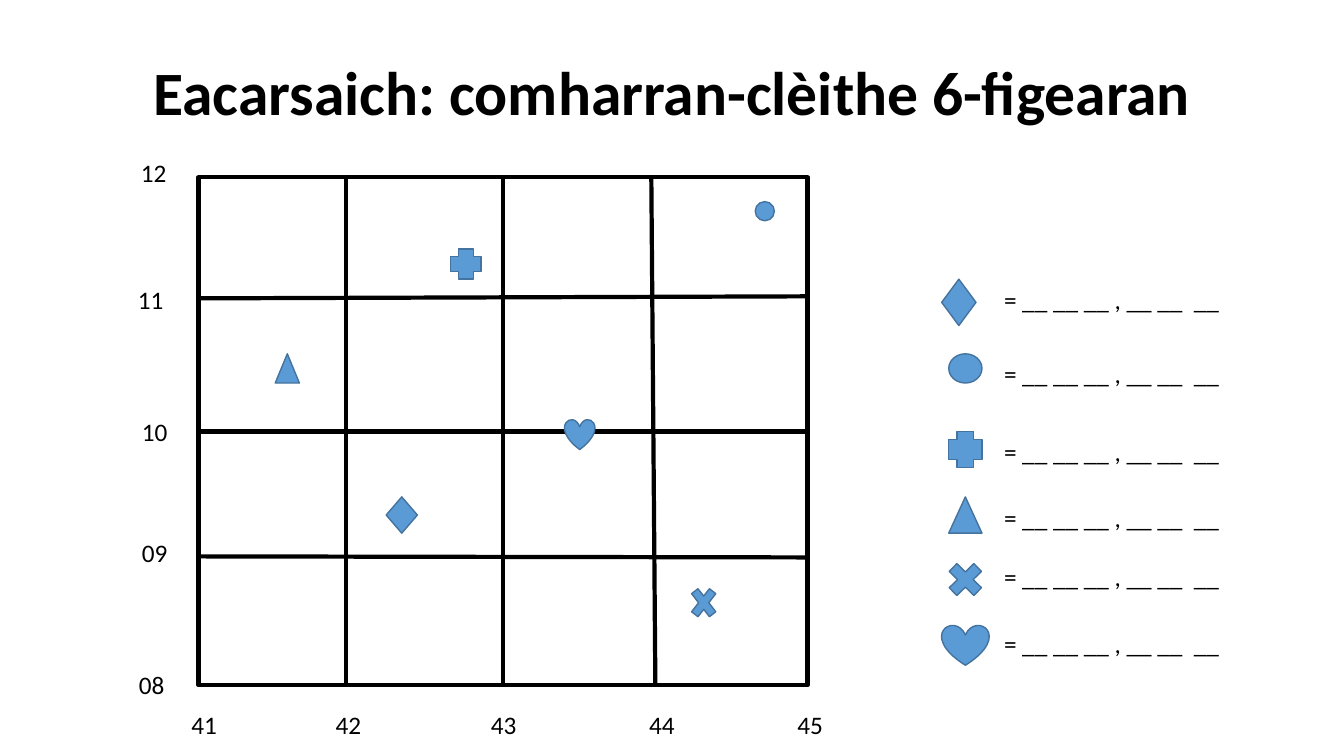
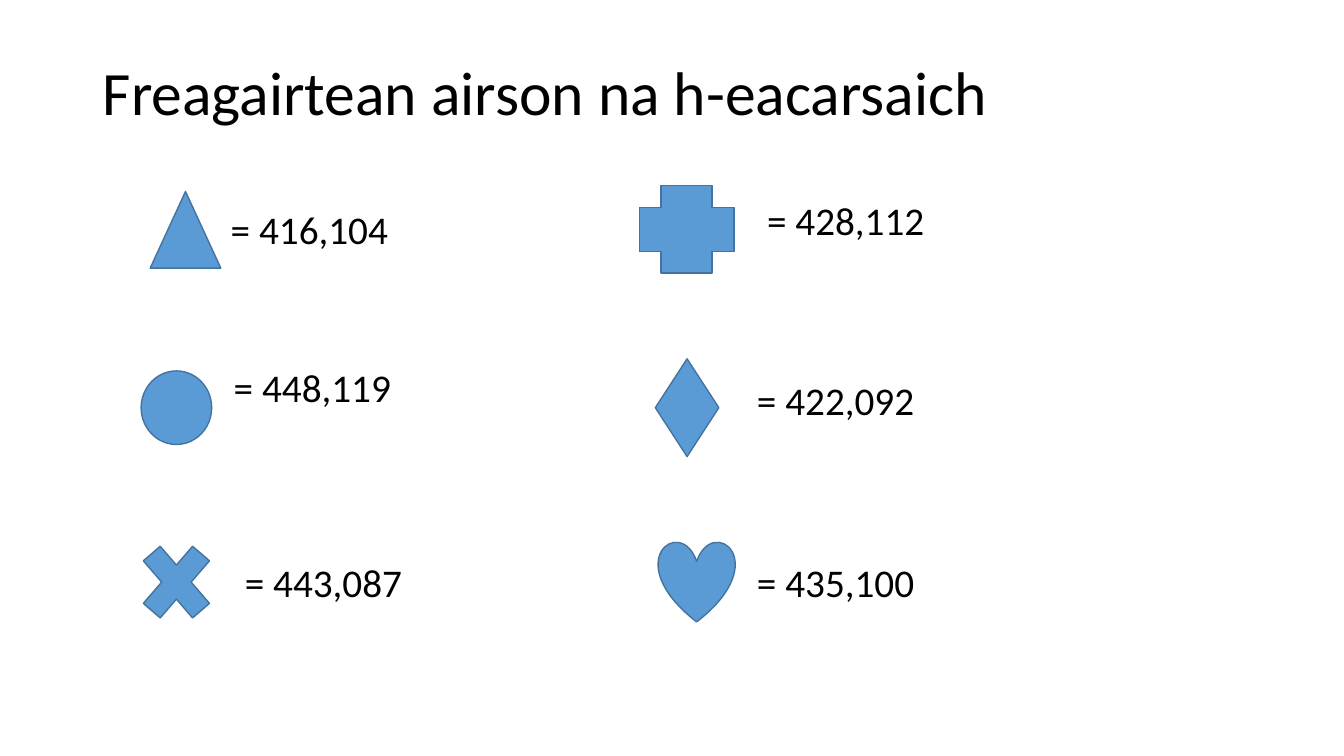
from pptx import Presentation
from pptx.dml.color import RGBColor
from pptx.enum.shapes import MSO_CONNECTOR, MSO_SHAPE
from pptx.enum.text import MSO_ANCHOR, MSO_AUTO_SIZE, PP_ALIGN
from pptx.oxml.ns import qn
from pptx.util import Pt
from lxml import etree

PX = 9144  # 100 px to the inch
BLACK = RGBColor(0x00, 0x00, 0x00)
BLUE = RGBColor(0x5B, 0x9B, 0xD5)
DARK_BLUE = RGBColor(0x43, 0x73, 0x9E)
FONT = "Calibri"

DIAMOND = MSO_SHAPE.DIAMOND
CIRCLE = MSO_SHAPE.OVAL
PLUS = MSO_SHAPE.CROSS
TRIANGLE = MSO_SHAPE.ISOSCELES_TRIANGLE
MULTIPLY = MSO_SHAPE.MATH_MULTIPLY
HEART = MSO_SHAPE.HEART
EXTRACT = MSO_SHAPE.FLOWCHART_EXTRACT
CONNECTOR = MSO_SHAPE.FLOWCHART_CONNECTOR
DECISION = MSO_SHAPE.FLOWCHART_DECISION
RECTANGLE = MSO_SHAPE.RECTANGLE
STRAIGHT = MSO_CONNECTOR.STRAIGHT
CENTER, LEFT = PP_ALIGN.CENTER, PP_ALIGN.LEFT


def add_symbol(page, kind, left, top, width, height):
    symbol = page.shapes.add_shape(kind, left * PX, top * PX, width * PX, height * PX)
    symbol.shadow.inherit = False
    symbol.fill.solid()
    symbol.fill.fore_color.rgb = BLUE
    symbol.line.color.rgb = DARK_BLUE
    symbol.line.width = Pt(1)
    return symbol


def add_label(page, text, left, top, width, height, size):
    box = page.shapes.add_textbox(left * PX, top * PX, width * PX, height * PX)
    box.text_frame.word_wrap = True
    para = box.text_frame.paragraphs[0]
    para.text = text
    para.font.name = FONT
    para.font.size = Pt(size)
    para.font.color.rgb = BLACK


deck = Presentation()
deck.slide_width, deck.slide_height = 1333 * PX, 750 * PX

# Pages with their titles
pages = []
for text, bold, align in [
    ("Eacarsaich: comharran-clèithe 6-figearan", True, CENTER),
    ("Freagairtean airson na h-eacarsaich", False, LEFT),
]:
    page = deck.slides.add_slide(deck.slide_layouts[5])
    title = page.shapes.title
    title.left, title.top, title.width, title.height = 92 * PX, 40 * PX, 1150 * PX, 110 * PX
    frame = title.text_frame
    frame.auto_size = MSO_AUTO_SIZE.NONE
    frame.vertical_anchor = MSO_ANCHOR.MIDDLE
    para = frame.paragraphs[0]
    para.text = text
    para.alignment = align
    para.line_spacing = 0.9
    para.font.name = FONT
    para.font.size = Pt(44)
    para.font.bold = bold
    para.font.color.rgb = BLACK
    pages.append(page)
exercise, answers = pages

# Map grid: frame and inner lines
GRID_LEFT, GRID_TOP, GRID_RIGHT, GRID_BOTTOM = 197, 176, 801, 680
border = exercise.shapes.add_shape(
    RECTANGLE, GRID_LEFT * PX, GRID_TOP * PX,
    (GRID_RIGHT - GRID_LEFT) * PX, (GRID_BOTTOM - GRID_TOP) * PX)
border.shadow.inherit = False
border.fill.background()
border.line.color.rgb = BLACK
border.line.width = Pt(3)

verticals = [(343, 343), (499, 499), (646, 650)]
horizontals = [(296, 294), (428, 428), (552, 553)]
grid_lines = [(top_x, GRID_TOP, bottom_x, GRID_BOTTOM) for top_x, bottom_x in verticals]
grid_lines += [(GRID_LEFT, left_y, GRID_RIGHT, right_y) for left_y, right_y in horizontals]
for ends in grid_lines:
    line = exercise.shapes.add_connector(STRAIGHT, *[end * PX for end in ends])
    line.line.color.rgb = BLACK
    line.line.width = Pt(3)
    etree.SubElement(line._element.spPr, qn("a:effectLst"))

# Symbols on the map
for kind, *place in [
    (CIRCLE, 749, 200, 19, 19),
    (DIAMOND, 383, 493, 31, 36),
    (TRIANGLE, 273, 351, 24, 29),
    (MULTIPLY, 681, 576, 34, 44),
    (PLUS, 447, 247, 30, 30),
    (HEART, 560, 416, 30, 30),
]:
    add_symbol(exercise, kind, *place)

# Key with blanks to fill in
for kind, left, top, width, height, label_top in [
    (DIAMOND, 934, 277, 34, 46, 277),
    (CIRCLE, 941, 351, 33, 29, 351),
    (PLUS, 941, 428, 33, 36, 428),
    (TRIANGLE, 941, 493, 33, 36, 493),
    (MULTIPLY, 934, 552, 47, 46, 552),
    (HEART, 934, 620, 47, 40, 618),
]:
    add_symbol(exercise, kind, left, top, width, height)
    add_label(exercise, "= __ __ __ , __ __  __", 986, label_top, 256, 40, 18)

# Northings and eastings
for text, left, top in [
    ("12", 130, 151), ("11", 127, 277), ("10", 131, 408), ("09", 131, 528), ("08", 128, 659),
    ("41", 180, 699), ("42", 323, 699), ("43", 477, 699), ("44", 634, 699), ("45", 781, 699),
]:
    add_label(exercise, text, left, top, 53, 40, 18)

# Answers: symbol, its place, grid reference and the place of that
for kind, place, text, left, top in [
    (EXTRACT, (149, 190, 70, 76), "= 416,104", 219, 199),
    (CONNECTOR, (140, 368, 70, 73), "= 448,119", 222, 356),
    (MULTIPLY, (128, 523, 94, 109), "= 443,087", 233, 549),
    (PLUS, (634, 184, 94, 87), "= 428,112", 751, 190),
    (DECISION, (650, 356, 63, 97), "= 422,092", 741, 368),
    (HEART, (653, 537, 76, 80), "= 435,100", 741, 549),
]:
    add_symbol(answers, kind, *place)
    add_label(answers, text, left, top, 220, 57, 28)

deck.save("out.pptx")
